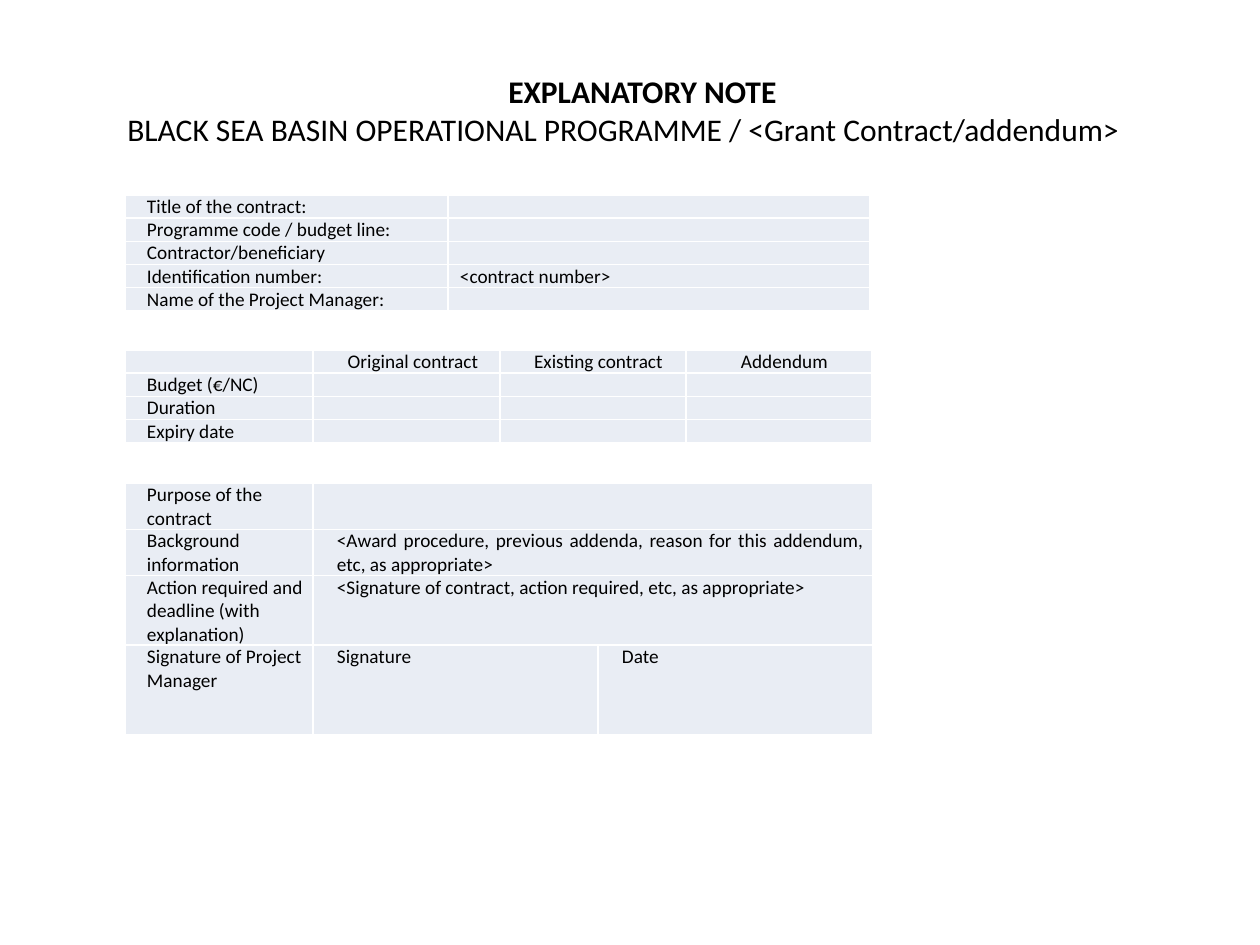
from pptx import Presentation
from pptx.dml.color import RGBColor
from pptx.enum.text import MSO_ANCHOR, PP_ALIGN
from pptx.oxml import parse_xml
from pptx.oxml.ns import nsdecls
from pptx.util import Emu, Pt

SCALE = 914400 / 126


def px(length):
    return Emu(round(length * SCALE))


def color(value):
    return RGBColor.from_string(value)


class NoteSlide:
    """Holds the note's style and the slide that its elements are added to."""

    font_name = "Calibri"
    text_color = "000000"
    cell_color = "E9EDF4"
    border_color = "FFFFFF"
    title_size = 18
    cell_size = 11
    cell_margin = 9

    def __init__(self, presentation):
        self.slide = presentation.slides.add_slide(presentation.slide_layouts[6])

    def set_text(self, paragraph, text, size, align, bold=False):
        paragraph.text = text
        paragraph.alignment = align
        font = paragraph.font
        font.name = self.font_name
        font.size = Pt(size)
        font.bold = bold
        font.color.rgb = color(self.text_color)

    def title(self, left, top, width, height, heading, subtitle):
        frame = self.slide.shapes.add_textbox(
            px(left), px(top), px(width), px(height)).text_frame
        frame.word_wrap = True
        self.set_text(frame.paragraphs[0], heading, self.title_size, PP_ALIGN.CENTER, True)
        self.set_text(frame.add_paragraph(), subtitle, self.title_size, PP_ALIGN.LEFT)

    def border(self, cell):
        properties = cell._tc.get_or_add_tcPr()
        for side in ("lnL", "lnR", "lnT", "lnB"):
            properties.append(parse_xml(
                f'<a:{side} {nsdecls("a")} w="12700"><a:solidFill>'
                f'<a:srgbClr val="{self.border_color}"/></a:solidFill></a:{side}>'))

    def cell(self, cell, text, indent, align, anchor):
        self.border(cell)
        cell.fill.solid()
        cell.fill.fore_color.rgb = color(self.cell_color)
        cell.margin_left = cell.margin_right = px(self.cell_margin)
        cell.margin_top = cell.margin_bottom = 0
        cell.vertical_anchor = anchor
        paragraph = cell.text_frame.paragraphs[0]
        self.set_text(paragraph, text, self.cell_size, align)
        paragraph._p.get_or_add_pPr().set("marL", str(px(indent)))
        if not text:
            paragraph._p.get_or_add_endParaRPr().set("sz", str(self.cell_size * 100))

    def table(self, left, top, columns, heights, rows, anchor=MSO_ANCHOR.TOP):
        width = sum(column[0] for column in columns)
        table = self.slide.shapes.add_table(
            len(rows), len(columns), px(left), px(top), px(width), px(sum(heights))).table
        table.first_row = table.horz_banding = False
        for column, (column_width, _, _) in zip(table.columns, columns):
            column.width = px(column_width)
        for row_index, (height, texts) in enumerate(zip(heights, rows)):
            table.rows[row_index].height = px(height)
            for column_index, (_, indent, align) in enumerate(columns):
                text = texts[column_index] if column_index < len(texts) else ""
                self.cell(table.cell(row_index, column_index), text, indent, align, anchor)
        return table


def main():
    presentation = Presentation()
    presentation.slide_width, presentation.slide_height = px(1260), px(945)
    note = NoteSlide(presentation)
    left, line = 125, 23

    note.title(115, 66, 1062, 89, "EXPLANATORY NOTE ",
               "BLACK SEA BASIN OPERATIONAL PROGRAMME / <Grant Contract/addendum>")

    note.table(
        left, 195,
        [(323, 13, PP_ALIGN.JUSTIFY), (422, 3, PP_ALIGN.JUSTIFY)],
        [line] * 5,
        [["Title of the contract:"],
         ["Programme code / budget line:"],
         ["Contractor/beneficiary"],
         ["Identification number:", "<contract number>"],
         ["Name of the Project Manager:"]],
        MSO_ANCHOR.MIDDLE)

    note.table(
        left, 350,
        [(188, 13, PP_ALIGN.JUSTIFY), (187, 13, PP_ALIGN.CENTER),
         (186, 11, PP_ALIGN.CENTER), (186, 11, PP_ALIGN.CENTER)],
        [line] * 4,
        [["", "Original contract", "Existing contract", "Addendum"],
         ["Budget (€/NC)"],
         ["Duration"],
         ["Expiry date"]])

    details = note.table(
        left, 483,
        [(188, 13, PP_ALIGN.LEFT), (285, 15, PP_ALIGN.JUSTIFY), (275, 15, PP_ALIGN.JUSTIFY)],
        [2 * line, 2 * line, 3 * line, 90],
        [["Purpose of the contract"],
         ["Background information",
          "<Award procedure, previous addenda, reason for this addendum, etc, as appropriate>"],
         ["Action required and deadline (with explanation)",
          "<Signature of contract, action required, etc, as appropriate>"],
         ["Signature of Project Manager", "Signature", "Date"]])
    for row in range(3):
        details.cell(row, 1).merge(details.cell(row, 2))

    presentation.save("out.pptx")


if __name__ == "__main__":
    main()
